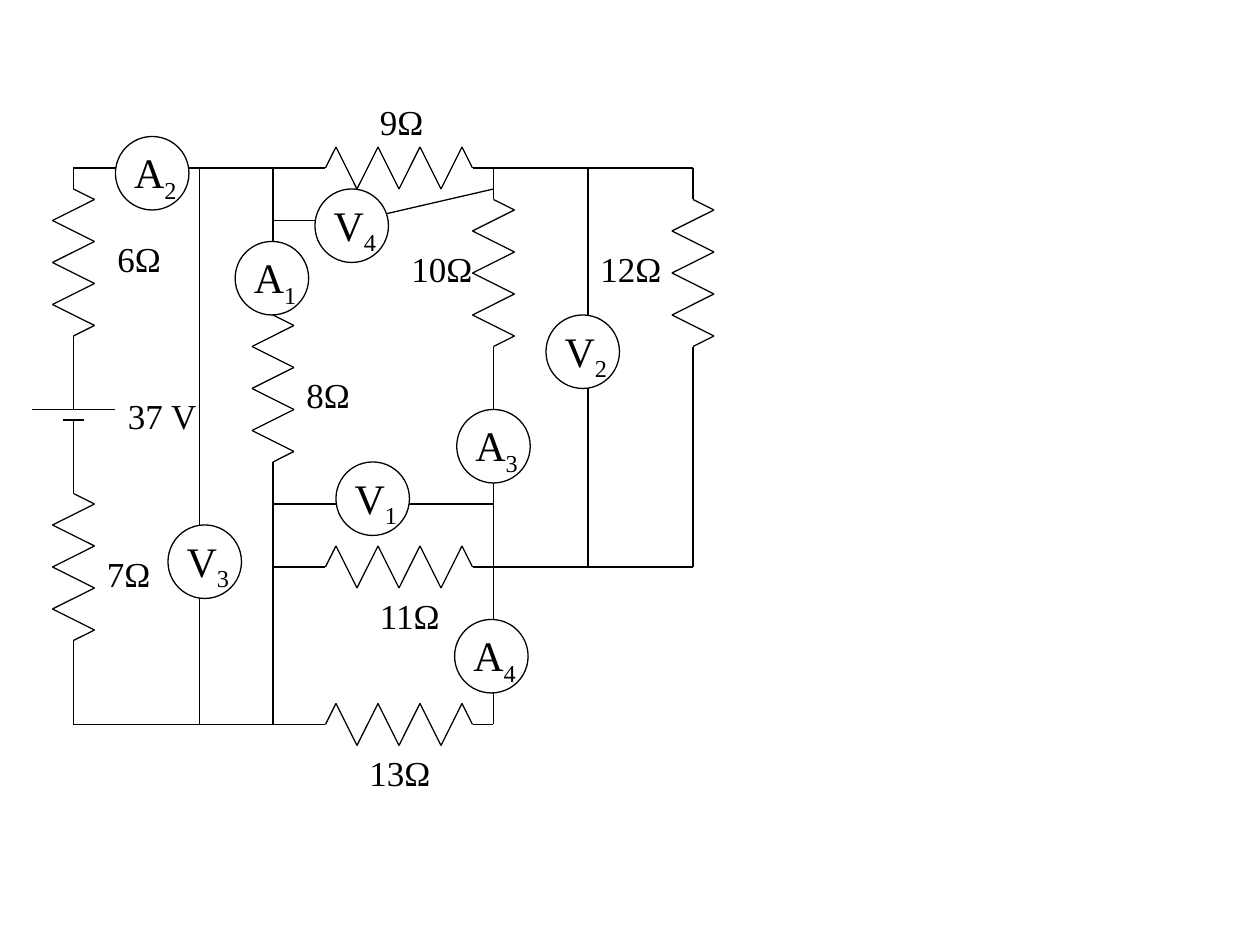
from dataclasses import dataclass
from itertools import pairwise

from lxml.etree import SubElement
from pptx import Presentation
from pptx.dml.color import RGBColor
from pptx.enum.shapes import MSO_CONNECTOR as CONN, MSO_SHAPE as SHAPE
from pptx.enum.text import MSO_AUTO_SIZE as AUTO, PP_ALIGN as ALIGN
from pptx.oxml.ns import qn
from pptx.util import Cm, Pt


@dataclass(frozen=True)
class Theme:
    ink: RGBColor = RGBColor(0, 0, 0)
    paper: RGBColor = RGBColor(255, 255, 255)
    font: str = "Times New Roman"
    label_size: Pt = Pt(20)
    meter_size: Pt = Pt(24)
    line_width: Pt = Pt(0.75)


def grid(n):
    """Length of n grid steps, twelve to the inch."""
    return Cm(n * 2.54 / 12)


class Circuit:
    def __init__(self, slide, theme):
        self.s, self.theme = slide, theme

    def wire(self, x1, y1, x2, y2):
        c = self.s.shapes.add_connector(CONN.STRAIGHT, *map(grid, (x1, y1, x2, y2)))
        c.line.color.rgb = self.theme.ink
        c.line.width = self.theme.line_width
        SubElement(c._element.spPr, qn("a:effectLst"))

    def resistor(self, x, y, vertical):
        """Zigzag 14 steps long from (x, y), with a lead of 2 at each end."""
        swing = 2 if vertical else -2
        peaks = [(a, swing if i % 2 == 0 else -swing)
                 for i, a in enumerate(range(1, 14, 2))]
        trail = [(-2, 0), (0, 0), *peaks, (14, 0), (16, 0)]
        points = [(x + off, y + a) if vertical else (x + a, y + off)
                  for a, off in trail]
        for start, end in pairwise(points):
            self.wire(*start, *end)

    def text(self, shapes, x, y, w, h, size, runs, align=None):
        """Add a text box; runs are (text, is_subscript) pairs."""
        tf = shapes.add_textbox(*map(grid, (x, y, w, h))).text_frame
        tf.word_wrap = False
        tf.auto_size = AUTO.SHAPE_TO_FIT_TEXT
        p = tf.paragraphs[0]
        p.alignment = align
        for words, subscript in runs:
            r = p.add_run()
            r.text = words
            r.font.name, r.font.size = self.theme.font, size
            r.font.color.rgb = self.theme.ink
            if subscript:
                r._r.get_or_add_rPr().set("baseline", "-25000")

    def label(self, words, x, y, width):
        self.text(self.s.shapes, x, y, width, 5.2, self.theme.label_size,
                  [(words, False)])

    def meter(self, letter, number, x, y):
        group = self.s.shapes.add_group_shape()
        sp = group.shapes.add_shape(SHAPE.OVAL, *map(grid, (x, y, 7, 7)))
        sp.shadow.inherit = False
        sp.fill.solid()
        sp.fill.fore_color.rgb = self.theme.paper
        sp.line.color.rgb = self.theme.ink
        sp.line.width = self.theme.line_width
        self.text(group.shapes, x + 0.5, y + 0.4, 6.6, 6, self.theme.meter_size,
                  [(letter, False), (number, True)], ALIGN.CENTER)


# Columns and rows of the circuit, in grid steps
LEFT, V3_X, INNER, MIDDLE, V2_X, RIGHT = 7, 19, 26, 47, 56, 66
TOP, V1_Y, LOWER, BOTTOM = 16, 48, 54, 69

BATTERY = [
    (LEFT, 34, LEFT, 39), (LEFT + 4, 39, LEFT - 4, 39),
    (LEFT + 1, 40, LEFT - 1, 40), (LEFT, 40, LEFT, 45),
]
RESISTORS = [
    (LEFT, 18, True), (LEFT, 47, True), (INNER, 30, True),
    (MIDDLE, 19, True), (RIGHT, 19, True),
    (31, TOP, False), (31, LOWER, False), (31, BOTTOM, False),
]
MAIN_WIRES = [
    (LEFT, 62, LEFT, BOTTOM), (LEFT, BOTTOM, 30, BOTTOM),
    (MIDDLE, BOTTOM, MIDDLE, LOWER), (INNER, BOTTOM, INNER, 45),
    (29, LOWER, INNER, LOWER), (INNER, 29, INNER, TOP),
    (29, TOP, LEFT, TOP), (46, TOP, RIGHT, TOP),
    (RIGHT, TOP, RIGHT, 18), (MIDDLE, TOP, MIDDLE, 17),
    (MIDDLE, 34, MIDDLE, 55), (RIGHT, 35, RIGHT, LOWER),
    (RIGHT, LOWER, MIDDLE, LOWER),
]
VOLTMETER_WIRES = [
    (INNER, V1_Y, 34, V1_Y), (38, V1_Y, MIDDLE, V1_Y),
    (V3_X, 55, V3_X, BOTTOM), (V3_X, 52, V3_X, TOP),
    (32, 21, INNER, 21), (34, 21, MIDDLE, 18),
    (V2_X, 32, V2_X, TOP), (V2_X, 34, V2_X, LOWER),
]
LABELS = [
    ("37 V", 11, 37, 9), ("6Ω", 10, 22, 6.6), ("7Ω", 9, 52, 6.6),
    ("11Ω", 35, 56, 8.3), ("13Ω", 34, 71, 8.3), ("8Ω", 28, 35, 6.6),
    ("9Ω", 35, 9, 6.6), ("10Ω", 38, 23, 8.3), ("12Ω", 56, 23, 8.3),
]
METERS = [
    ("A", "2", 11, 13), ("V", "2", 52, 30), ("V", "1", 32, 44),
    ("V", "3", 16, 50), ("V", "4", 30, 18), ("A", "1", 22.4, 23),
    ("A", "3", 43.5, 39), ("A", "4", 43.3, 59),
]


def main():
    prs = Presentation()
    prs.slide_width, prs.slide_height = Cm(25.4), Cm(19.05)
    circuit = Circuit(prs.slides.add_slide(prs.slide_layouts[6]), Theme())

    # Battery, resistors and wiring
    for ends in BATTERY:
        circuit.wire(*ends)
    for place in RESISTORS:
        circuit.resistor(*place)
    for ends in MAIN_WIRES:
        circuit.wire(*ends)

    # Values
    for item in LABELS:
        circuit.label(*item)

    # Meters cover the wires that run into them
    for ends in VOLTMETER_WIRES:
        circuit.wire(*ends)
    for item in METERS:
        circuit.meter(*item)

    prs.save("out.pptx")


if __name__ == "__main__":
    main()
